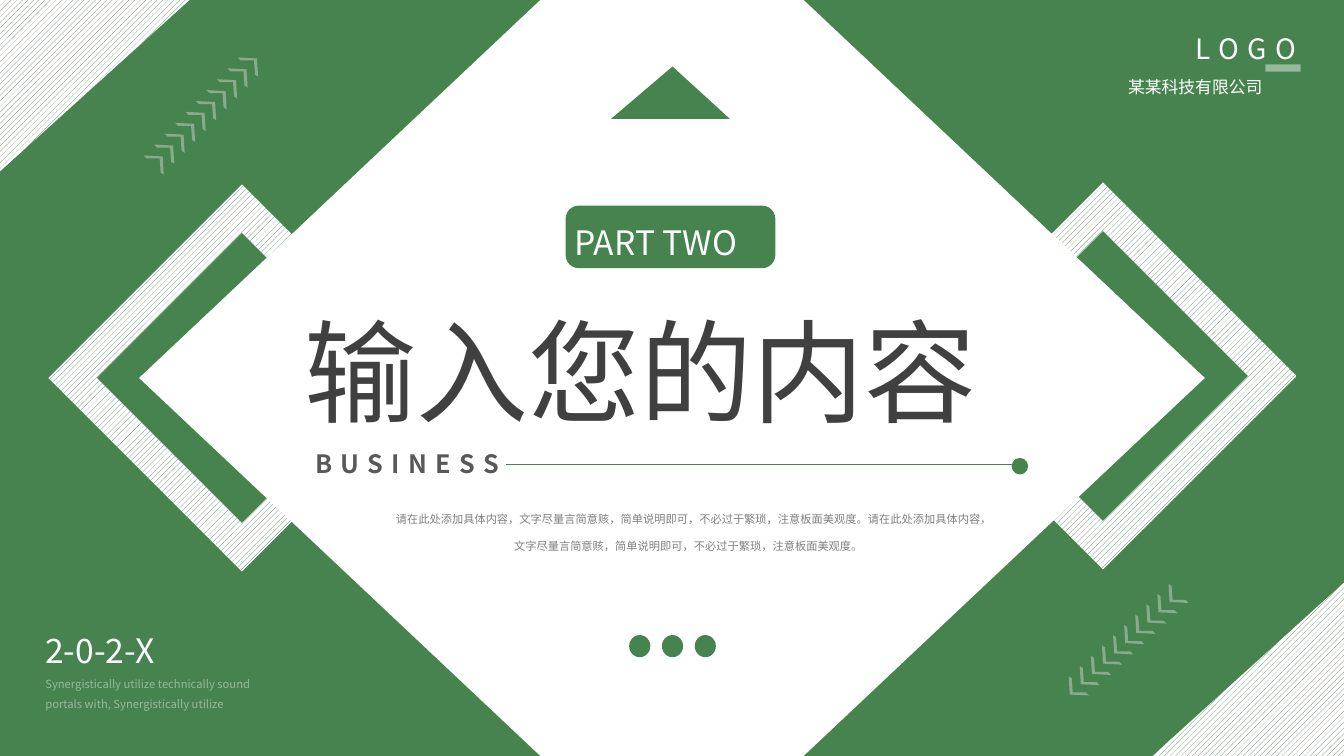
"""Build the green section-divider slide with a white diamond and hatched frames."""
from lxml.etree import SubElement
from pptx import Presentation
from pptx.dml.color import RGBColor
from pptx.enum.dml import MSO_PATTERN
from pptx.enum.shapes import MSO_CONNECTOR, MSO_SHAPE
from pptx.enum.text import PP_ALIGN
from pptx.oxml.ns import qn
from pptx.util import Inches, Pt

GREEN = RGBColor(0x47, 0x83, 0x4F)
WHITE = RGBColor(0xFF, 0xFF, 0xFF)
DARK = RGBColor(0x40, 0x40, 0x40)
SLATE = RGBColor(0x59, 0x59, 0x59)
GRAY = RGBColor(0x80, 0x80, 0x80)
FONT = "Noto Sans CJK SC"
WIDTH, HEIGHT = 13.33, 7.5

LEFT, JUSTIFY, CENTER = PP_ALIGN.LEFT, PP_ALIGN.JUSTIFY, PP_ALIGN.CENTER
BODY = ("请在此处添加具体内容，文字尽量言简意赅，简单说明即可，不必过于繁琐，注意板面美观度。"
        "请在此处添加具体内容，文字尽量言简意赅，简单说明即可，不必过于繁琐，注意板面美观度。")
TAGLINE = "Synergistically utilize technically sound portals with, Synergistically utilize"
TEXTS = [
    dict(text="2-0-2-X", at=(0.35, 6.2, 1.59, 0.51), size=24, color=WHITE, align=JUSTIFY),
    dict(text=TAGLINE, at=(0.45, 6.65, 2.34, 0.38), size=8, color=WHITE, opacity=44,
         lines=1.5, margins=(0, 0)),
    dict(text="LOGO", at=(11.76, 0.1, 1.53, 0.55), size=20, color=WHITE, lines=1.5, tracking=6),
    dict(text="某某科技有限公司", at=(11.09, 0.71, 1.98, 0.3), size=12, color=WHITE, align=JUSTIFY),
    dict(text="输入您的内容", at=(2.92, 2.95, 7.54, 1.45), size=80, color=DARK, align=JUSTIFY),
    dict(text="PART TWO", at=(5.6, 2.15, 2.2, 0.5), size=24, color=WHITE),
    dict(text=BODY, at=(3.8, 4.9, 6.06, 0.6), size=8, color=GRAY, align=CENTER, lines=2.0),
    dict(text="BUSINESS", at=(3.03, 4.4, 2.5, 0.4), size=18, color=SLATE, bold=True, tracking=6),
]

FRAME_CENTERS = [(2.4, 3.75), (10.94, 3.73)]
FRAME_RADII = [1.44, 1.92]
CORNERS = [
    [(0, 0), (1.88, 0), (0, 1.7)],
    [(WIDTH, HEIGHT), (11.43, HEIGHT), (WIDTH, 5.78)],
]
ARROWHEAD = [(0.01, 0.18), (0, 0), (-0.19, -0.01), (-0.16, 0.02), (-0.03, 0.02), (-0.02, 0.16)]
ARROW_COUNT = 10
ARROW_ROWS = [((2.55, 0.58), (-0.104, 0.108), 1), ((10.61, 6.89), (0.11, -0.102), -1)]
TRIANGLE = [(6.06, 1.18), (6.67, 0.66), (7.24, 1.18)]
DOT_COUNT, DOT_LEFT, DOT_STEP = 3, 6.24, 0.325


def paint(shape, color, opacity=100):
    """Give a shape a flat fill without outline or shadow."""
    shape.shadow.inherit = False
    shape.line.fill.background()
    shape.fill.solid()
    shape.fill.fore_color.rgb = color
    set_opacity(shape._element.spPr, opacity)


def set_opacity(holder, opacity):
    """Make the first colour inside an element partly transparent."""
    if opacity < 100:
        SubElement(next(holder.iter(qn("a:srgbClr"))), qn("a:alpha"), val=str(opacity * 1000))


def hatch(shape):
    """Fill a shape with wide diagonal stripes."""
    shape.shadow.inherit = False
    shape.line.fill.background()
    shape.fill.patterned()
    shape.fill.pattern = MSO_PATTERN.WIDE_UPWARD_DIAGONAL
    shape.fill.fore_color.rgb = GREEN
    shape.fill.back_color.rgb = WHITE


def add_preset(page, kind, at, color, opacity=100):
    """Add a flat preset shape."""
    shape = page.shapes.add_shape(kind, *map(Inches, at))
    paint(shape, color, opacity)
    return shape


def add_outline(page, *contours):
    """Add a freeform made of closed contours."""
    scaled = [[(Inches(x), Inches(y)) for x, y in contour] for contour in contours]
    builder = page.shapes.build_freeform(*scaled[0][0])
    builder.add_line_segments(scaled[0][1:], close=True)
    for contour in scaled[1:]:
        builder.move_to(*contour[0])
        builder.add_line_segments(contour[1:], close=True)
    return builder.convert_to_shape()


def add_text(page, text, at, size, color, align=LEFT, opacity=100, lines=None,
             margins=(0.1, 0.05), tracking=0, bold=False):
    """Add a wrapped text box holding one paragraph."""
    frame = page.shapes.add_textbox(*map(Inches, at)).text_frame
    frame.word_wrap = True
    frame.margin_left = frame.margin_right = Inches(margins[0])
    frame.margin_top = frame.margin_bottom = Inches(margins[1])
    para = frame.paragraphs[0]
    para.text = text
    para.alignment = align
    if lines:
        para.line_spacing = lines
    para.font.size = Pt(size)
    para.font.name = FONT
    para.font.bold = bold
    para.font.color.rgb = color
    style = para._p.pPr.find(qn("a:defRPr"))
    SubElement(style, qn("a:ea"), typeface=FONT)
    if tracking:
        style.set("spc", str(tracking * 100))
    set_opacity(style, opacity)


def diamond(center, radius):
    """Return the four corners of a square standing on its tip."""
    x, y = center
    return [(x, y - radius), (x - radius, y), (x, y + radius), (x + radius, y)]


def add_background(page):
    """Add the green ground, hatched frames, white diamond and corners."""
    add_preset(page, MSO_SHAPE.RECTANGLE, (0, 0, WIDTH, HEIGHT), GREEN)
    for center in FRAME_CENTERS:
        hatch(add_outline(page, *[diamond(center, radius) for radius in FRAME_RADII]))
    add_preset(page, MSO_SHAPE.DIAMOND, (1.38, -1.23, 10.57, 9.96), WHITE)
    for corner in CORNERS:
        hatch(add_outline(page, corner))


def add_ornaments(page):
    """Add the arrow rows, badge, triangle, rule and dots."""
    for (left, top), (step_x, step_y), sign in ARROW_ROWS:
        for index in range(ARROW_COUNT):
            tip_x, tip_y = left + index * step_x, top + index * step_y
            arrow = add_outline(page, [(tip_x + sign * x, tip_y + sign * y) for x, y in ARROWHEAD])
            paint(arrow, WHITE, 34)
    add_preset(page, MSO_SHAPE.RECTANGLE, (12.55, 0.64, 0.35, 0.07), WHITE, 44)
    badge = add_preset(page, MSO_SHAPE.ROUNDED_RECTANGLE, (5.61, 2.04, 2.08, 0.62), GREEN)
    badge.adjustments[0] = 0.21
    paint(add_outline(page, TRIANGLE), GREEN)
    rule = page.shapes.add_connector(
        MSO_CONNECTOR.STRAIGHT, *map(Inches, (5.02, 4.61, 10.04, 4.61)))
    rule.line.color.rgb = GREEN
    rule.line.width = Pt(0.5)
    SubElement(rule._element.spPr, qn("a:effectLst"))
    rule_end = add_preset(page, MSO_SHAPE.OVAL, (10.04, 4.55, 0.15, 0.15), GREEN)
    rule_end.line.color.rgb = GREEN
    rule_end.line.width = Pt(1)
    for index in range(DOT_COUNT):
        add_preset(page, MSO_SHAPE.OVAL, (DOT_LEFT + index * DOT_STEP, 6.3, 0.21, 0.22), GREEN)


def main():
    """Assemble and save the deck."""
    deck = Presentation()
    deck.slide_width, deck.slide_height = Inches(WIDTH), Inches(HEIGHT)
    page = deck.slides.add_slide(deck.slide_layouts[6])
    add_background(page)
    add_ornaments(page)
    for text in TEXTS:
        add_text(page, **text)
    deck.save("out.pptx")


if __name__ == "__main__":
    main()
